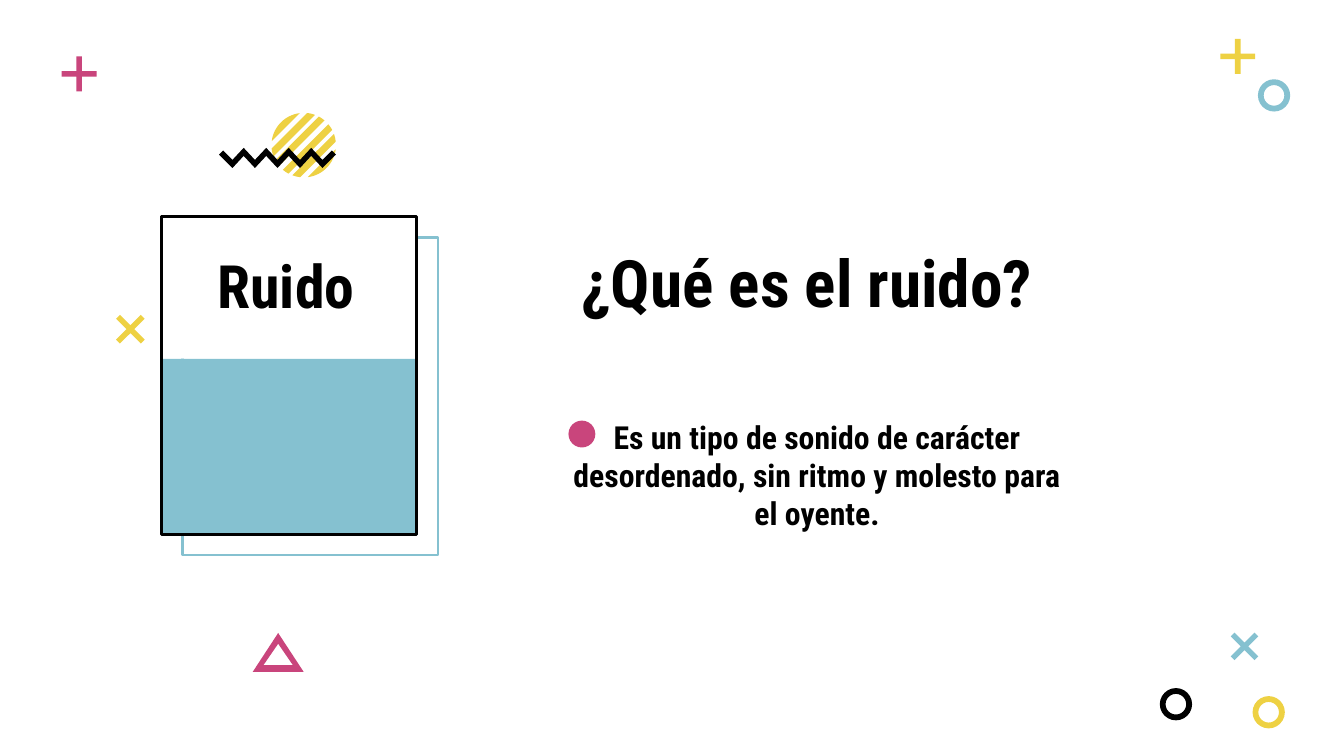
from math import acos, cos, pi, sin

from pptx import Presentation
from pptx.dml.color import RGBColor
from pptx.enum.shapes import MSO_SHAPE
from pptx.enum.text import MSO_ANCHOR, PP_ALIGN
from pptx.util import Inches, Pt

YELLOW, BLUE, PINK = "EED143", "85C1D0", "C9457C"
BLACK, WHITE = "000000", "FFFFFF"

prs = Presentation()
prs.slide_width = Inches(10)
prs.slide_height = Inches(10 * 9 / 16)
slide = prs.slides.add_slide(prs.slide_layouts[6])
shapes = slide.shapes


def paint(shape, fill=None, line=None):
    shape.shadow.inherit = False
    if fill:
        shape.fill.solid()
        shape.fill.fore_color.rgb = RGBColor.from_string(fill)
    else:
        shape.fill.background()
    if line:
        shape.line.color.rgb = RGBColor.from_string(line)
        shape.line.width = Pt(1.5)
    else:
        shape.line.fill.background()


def add_text(text, left, top, width, height, size=17, align=PP_ALIGN.LEFT):
    frame = shapes.add_textbox(Inches(left), Inches(top), Inches(width), Inches(height)).text_frame
    frame.word_wrap = True
    frame.vertical_anchor = MSO_ANCHOR.TOP
    frame.margin_left = frame.margin_right = Inches(0.1)
    frame.margin_top = frame.margin_bottom = Inches(0.1)
    paragraph = frame.paragraphs[0]
    paragraph.alignment = align
    run = paragraph.add_run()
    run.text = text
    run.font.name = "Roboto Condensed"
    run.font.size = Pt(size)
    run.font.bold = True
    run.font.color.rgb = RGBColor.from_string(BLACK)


# Plus signs, and the same sign turned into a cross
for center_x, center_y, size, angle, color in [
    (9.21, 0.42, 0.26, 0, YELLOW),
    (9.26, 4.81, 0.25, 45, BLUE),
    (0.97, 2.45, 0.26, 45, YELLOW),
    (0.59, 0.55, 0.26, 0, PINK),
]:
    plus = shapes.add_shape(MSO_SHAPE.CROSS, Inches(center_x - size / 2),
                            Inches(center_y - size / 2), Inches(size), Inches(size))
    plus.adjustments[0] = 0.42
    plus.rotation = angle
    paint(plus, fill=color)

for left, top, color in [(9.32, 5.18, YELLOW), (8.63, 5.12, BLACK), (9.36, 0.59, BLUE)]:
    ring = shapes.add_shape(MSO_SHAPE.DONUT, Inches(left), Inches(top), Inches(0.24), Inches(0.24))
    ring.adjustments[0] = 0.18
    paint(ring, fill=color)

# Striped disc: each stripe lies between two parallel chords at 45 degrees
disc_x, disc_y, radius = 2.26, 1.08, 0.24
for side in (0, pi):
    for near, far in [(0.02, 0.07), (0.1, 0.15), (0.19, radius)]:
        wide, narrow = acos(near / radius), acos(far / radius)
        arc = [narrow + (wide - narrow) * step / 8 for step in range(9)]
        angles = [pi / 4 + side + turn for turn in arc[::-1] + [-turn for turn in arc]]
        rim = [(Inches(disc_x + radius * cos(a)), Inches(disc_y + radius * sin(a))) for a in angles]
        stripe = shapes.build_freeform(*rim[0])
        stripe.add_line_segments(rim[1:])
        paint(stripe.convert_to_shape(), fill=YELLOW)

# Zigzag band
turns = [(1.73 + 0.67 * i / 8, 0.09 * (i % 2)) for i in range(9)]
upper = [(1.63, 1.15), (1.66, 1.12)] + [(x, 1.19 - rise) for x, rise in turns]
lower = [(2.47, 1.12), (2.5, 1.15)] + [(x, 1.25 - rise) for x, rise in turns[::-1]]
band = [(Inches(x), Inches(y)) for x, y in upper + lower]
zigzag = shapes.build_freeform(*band[0])
zigzag.add_line_segments(band[1:])
paint(zigzag.convert_to_shape(), fill=BLACK)

# Hollow triangle
triangle = shapes.build_freeform(Inches(2.07), Inches(4.71))
triangle.add_line_segments([(Inches(1.88), Inches(5)), (Inches(2.26), Inches(5))])
triangle.move_to(Inches(2.07), Inches(4.79))
triangle.add_line_segments([(Inches(2.18), Inches(4.95)), (Inches(1.96), Inches(4.95))])
paint(triangle.convert_to_shape(), fill=PINK)

add_text("¿Qué es el ruido?", 4.23, 1.7, 3.71, 0.96, size=35)
add_text("Es un tipo de sonido de carácter desordenado, sin ritmo y molesto para el oyente.",
         4.06, 3.01, 4.04, 0.43, align=PP_ALIGN.CENTER)
bullet = shapes.add_shape(MSO_SHAPE.OVAL, Inches(4.23), Inches(3.13), Inches(0.2), Inches(0.2))
paint(bullet, fill=PINK)

# Card: offset back frame, white head, blue body, black outline
for left, top, height, fill, line in [
    (1.36, 1.77, 2.36, WHITE, BLUE),
    (1.21, 1.61, 1.06, WHITE, None),
    (1.21, 2.67, 1.31, BLUE, None),
    (1.2, 1.61, 2.37, None, BLACK),
]:
    panel = shapes.add_shape(MSO_SHAPE.RECTANGLE, Inches(left), Inches(top),
                             Inches(1.9), Inches(height))
    paint(panel, fill=fill, line=line)
add_text("Ruido", 1.52, 1.75, 1.29, 0.86, size=32)

prs.save("out.pptx")
